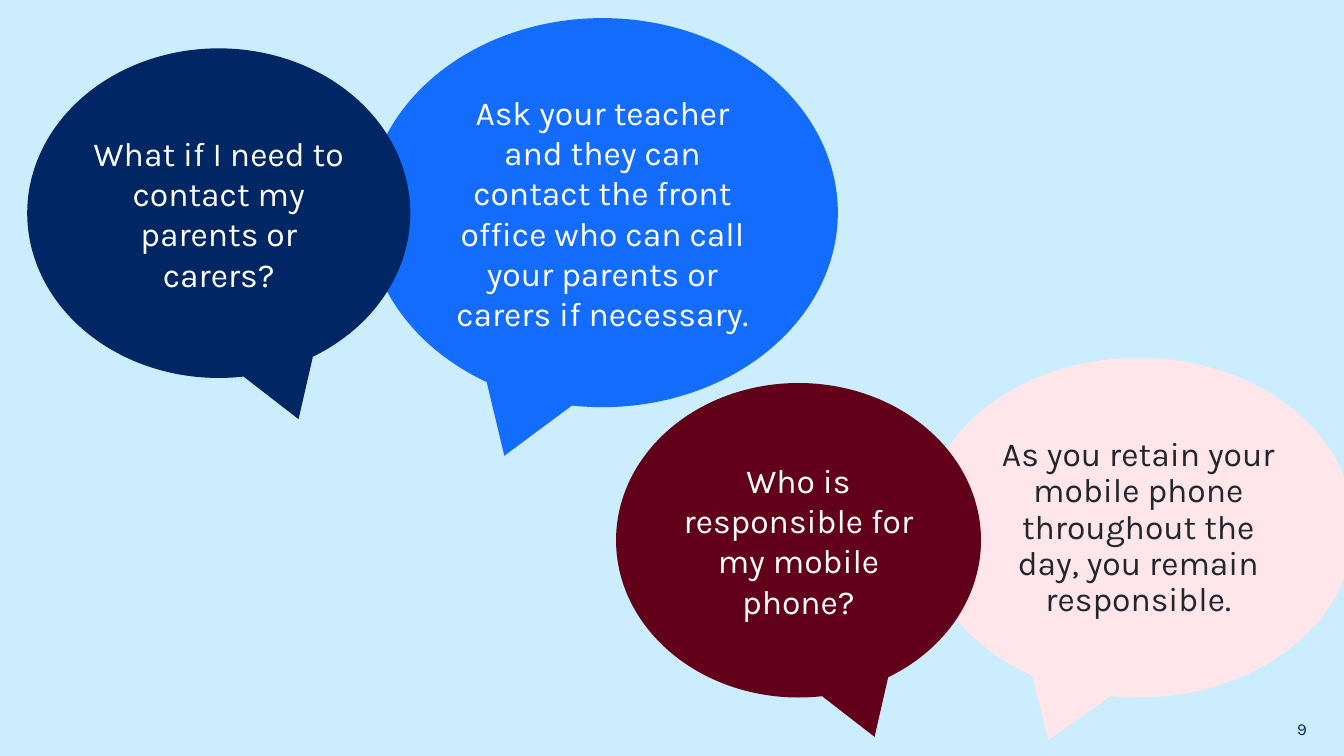
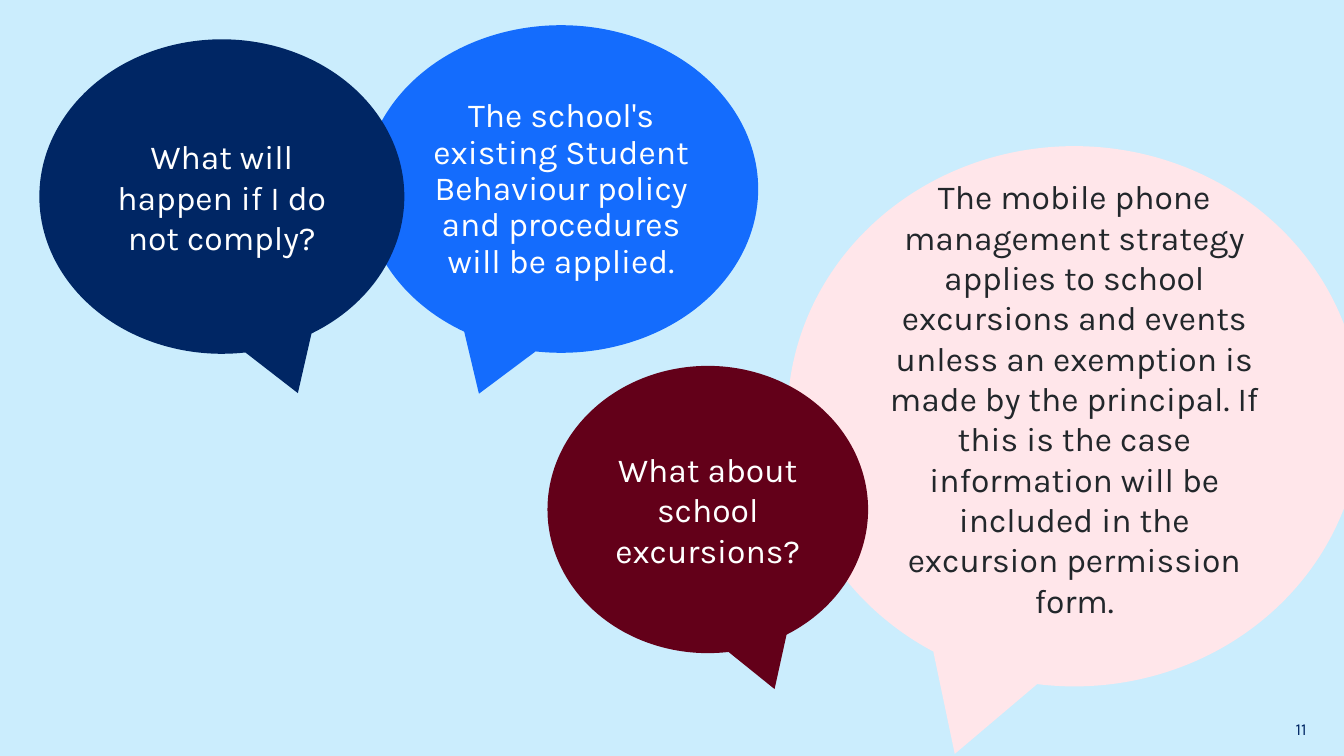
from dataclasses import dataclass

from pptx import Presentation
from pptx.dml.color import RGBColor
from pptx.enum.shapes import MSO_SHAPE
from pptx.enum.text import MSO_ANCHOR, PP_ALIGN
from pptx.util import Pt

SCALE = 9144  # EMU in one px: 100 px to the inch


@dataclass(frozen=True)
class Theme:
    sky: str = "CBEDFD"
    navy: str = "002664"
    blue: str = "146CFD"
    wine: str = "630019"
    pink: str = "FFE6EA"
    white: str = "FFFFFF"
    ink: str = "22272B"
    face: str = "Karla"
    body: int = 24
    small: int = 12
    tight: int = 26  # line height in points


class Deck:
    def __init__(self, theme):
        self.theme = theme
        self.file = Presentation()
        self.file.slide_width = 1333 * SCALE
        self.file.slide_height = 750 * SCALE
        self.slide = None

    def page(self, number):
        """Start a slide with the shared background and page number."""
        self.slide = self.file.slides.add_slide(self.file.slide_layouts[6])
        fill = self.slide.background.fill
        fill.solid()
        fill.fore_color.rgb = RGBColor.from_string(self.theme.sky)
        box = self.slide.shapes.add_textbox(*self.place(1217, 713, 79, 20))
        frame = box.text_frame
        frame.margin_left = frame.margin_right = 0
        frame.margin_top = frame.margin_bottom = 0
        self.label(frame, str(number), self.theme.small, self.theme.navy,
                   PP_ALIGN.RIGHT)

    def place(self, *box):
        return [length * SCALE for length in box]

    def label(self, frame, text, size, color, align):
        frame.word_wrap = True
        frame.text = text
        line = frame.paragraphs[0]
        line.alignment = align
        font = line.runs[0].font
        font.name = self.theme.face
        font.size = Pt(size)
        font.color.rgb = RGBColor.from_string(color)
        return line

    def bubble(self, box, fill, text, color, right=False, tight=False, lift=0):
        """Speech bubble; its tail points left unless right is set."""
        shape = self.slide.shapes.add_shape(
            MSO_SHAPE.OVAL_CALLOUT, *self.place(*box))
        shape.shadow.inherit = False
        shape.fill.solid()
        shape.fill.fore_color.rgb = RGBColor.from_string(fill)
        shape.line.fill.background()
        if right:
            shape.adjustments[0] = -shape.adjustments[0]
        frame = shape.text_frame
        frame.vertical_anchor = MSO_ANCHOR.MIDDLE
        frame.margin_bottom += lift * SCALE
        line = self.label(frame, text, self.theme.body, color, PP_ALIGN.CENTER)
        if tight:
            line.line_spacing = Pt(self.theme.tight)

    def ask(self, box, fill, text):
        self.bubble(box, fill, text, self.theme.white, right=True)


def main():
    theme = Theme()
    deck = Deck(theme)

    # Contacting parents, and responsibility for phones
    deck.page(9)
    deck.bubble((364, 18, 467, 386), theme.blue,
                "Ask your teacher and they can contact the front office "
                "who can call your parents or carers if necessary.",
                theme.white)
    deck.ask((27, 48, 380, 327), theme.navy,
             "What if I need to contact my parents or carers?")
    deck.bubble((915, 355, 428, 337), theme.pink,
                "As you retain your mobile phone throughout the day, "
                "you remain responsible.", theme.ink, tight=True)
    deck.ask((611, 380, 362, 312), theme.wine,
             "Who is responsible for my mobile phone?")

    # Not complying, and excursions
    deck.page(11)
    deck.bubble((361, 25, 391, 325), theme.blue,
                "The school's existing Student Behaviour policy and "
                "procedures will be applied.", theme.white, tight=True)
    deck.ask((39, 39, 362, 312), theme.navy,
             "What will happen if I do not comply?")
    deck.bubble((781, 145, 569, 536), theme.pink,
                "The mobile phone management strategy applies to school "
                "excursions and events unless an exemption is made by the "
                "principal. If this is the case information will be included "
                "in the excursion permission form.", theme.ink, lift=36)
    deck.ask((543, 363, 318, 285), theme.wine,
             "What about school excursions?")

    deck.file.save("out.pptx")


if __name__ == "__main__":
    main()
